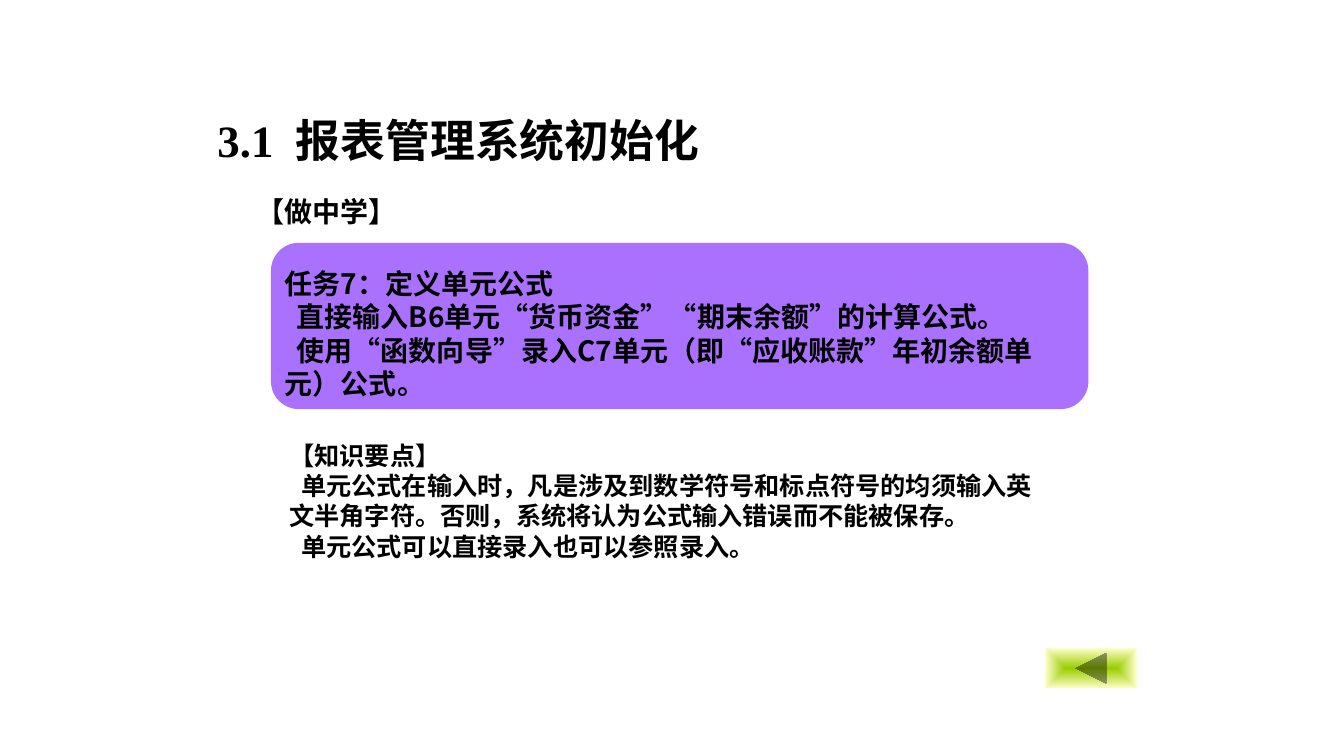
from lxml import etree
from pptx import Presentation
from pptx.dml.color import RGBColor
from pptx.enum.shapes import MSO_SHAPE
from pptx.oxml.ns import qn
from pptx.util import Cm, Pt

ROUNDED = MSO_SHAPE.ROUNDED_RECTANGLE
BACK_BUTTON = MSO_SHAPE.ACTION_BUTTON_BACK_OR_PREVIOUS
SANS = "Noto Sans CJK SC"
SERIF = "Times New Roman"
LINE_HEIGHT = 1.2
FIRST_LINE = Cm(0.3)


def colour(value):
    return RGBColor.from_string(value)


def add_plain_shape(page, kind, left, top, width, height):
    shape = page.shapes.add_shape(kind, Cm(left), Cm(top), Cm(width), Cm(height))
    shape.shadow.inherit = False
    shape.line.fill.background()
    return shape


def add_panel(page, left, top, width, height, fill):
    panel = add_plain_shape(page, ROUNDED, left, top, width, height)
    panel.fill.solid()
    panel.fill.fore_color.rgb = colour(fill)


def add_back_button(page, left, top, width, height, centre, edge):
    """Add a back button shaded in rectangles from its centre to its edge."""
    button = add_plain_shape(page, BACK_BUTTON, left, top, width, height)
    button.fill.gradient()
    for stop, value in zip(button.fill.gradient_stops, (centre, edge)):
        stop.color.rgb = colour(value)
    gradient = button._element.spPr.find(qn("a:gradFill"))
    gradient.remove(gradient.find(qn("a:lin")))
    shading = etree.SubElement(gradient, qn("a:path"), path="rect")
    sides = dict.fromkeys("ltrb", "50000")
    etree.SubElement(shading, qn("a:fillToRect"), **sides)


def add_span(para, text, size, font):
    span = para.add_run()
    span.text = text
    span.font.size = Pt(size)
    span.font.bold = True
    span.font.name = font
    span.font.color.rgb = colour("000000")
    properties = span._r.get_or_add_rPr()
    properties.set("lang", "zh-CN")
    etree.SubElement(properties, qn("a:ea"), typeface=SANS)


def add_text(page, left, top, width, height, lines, size, font=SANS, wrap=True):
    """Add a heading line, then body lines with an indented first line."""
    box = page.shapes.add_textbox(Cm(left), Cm(top), Cm(width), Cm(height))
    frame = box.text_frame
    frame.word_wrap = wrap
    for index, line in enumerate(lines):
        para = frame.add_paragraph() if index else frame.paragraphs[0]
        para.line_spacing = Pt(size * LINE_HEIGHT)
        if index:
            para._p.get_or_add_pPr().set("indent", str(FIRST_LINE))
        add_span(para, line, size, font)


def main():
    deck = Presentation()
    deck.slide_width, deck.slide_height = Cm(33.87), Cm(19.05)
    page = deck.slides.add_slide(deck.slide_layouts[6])

    add_back_button(page, 26.34, 16.33, 2.31, 1.02, "99CC00", "FFFFCC")
    add_panel(page, 6.83, 6.12, 20.6, 4.19, "AA71FF")
    add_text(page, 7.04, 10.97, 19.51, 4.09, [
        "【知识要点】",
        "单元公式在输入时，凡是涉及到数学符号和标点符号的均须输入英文半角字符。"
        "否则，系统将认为公式输入错误而不能被保存。",
        "单元公式可以直接录入也可以参照录入。",
    ], 18)
    add_text(page, 6.22, 4.78, 4.06, 1.12, ["【做中学】"], 20, SERIF, wrap=False)
    add_text(page, 6.93, 6.58, 20.09, 3.68, [
        "任务7：定义单元公式",
        "直接输入B6单元“货币资金”“期末余额”的计算公式。",
        "使用“函数向导”录入C7单元（即“应收账款”年初余额单元）公式。",
    ], 20)
    add_text(page, 5.23, 2.72, 22.61, 1.63, ["3.1  报表管理系统初始化"], 32, SERIF)

    deck.save("out.pptx")


if __name__ == "__main__":
    main()
